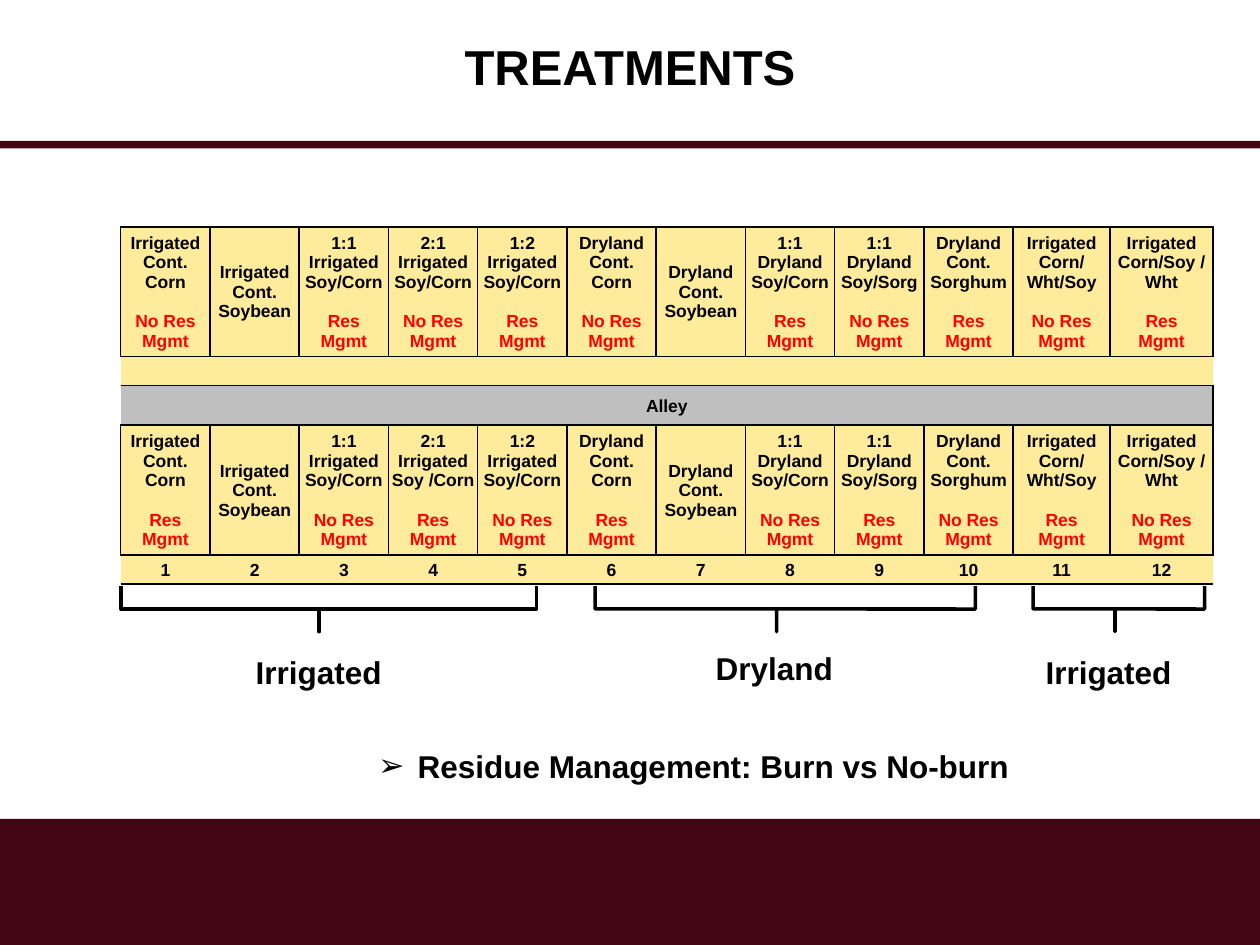
from lxml.etree import SubElement
from pptx import Presentation
from pptx.dml.color import RGBColor
from pptx.enum.shapes import MSO_SHAPE as SHAPE
from pptx.enum.text import MSO_ANCHOR as ANCHOR, MSO_AUTO_SIZE as AUTO, PP_ALIGN as ALIGN
from pptx.oxml.ns import qn
from pptx.util import Pt

BLACK = RGBColor(0x00, 0x00, 0x00)
RED = RGBColor(0xFF, 0x00, 0x00)
MAROON = RGBColor(0x41, 0x06, 0x11)
YELLOW = RGBColor(0xFF, 0xEB, 0x9C)
GREY = RGBColor(0xBF, 0xBF, 0xBF)
FONT = "Arial"

COL_WIDTHS = [51] * 10 + [55.4, 58.8]
ROW_HEIGHTS = [74.2, 16.6, 22.6, 74.2, 16.6]
CROPS = [
    "Irrigated Cont. Corn", "Irrigated Cont. Soybean",
    "1:1 Irrigated Soy/Corn", "2:1\nIrrigated Soy/Corn", "1:2 Irrigated Soy/Corn",
    "Dryland Cont. Corn", "Dryland Cont. Soybean",
    "1:1 Dryland Soy/Corn", "1:1\nDryland Soy/Sorg", "Dryland Cont. Sorghum",
    "Irrigated\nCorn/Wht/Soy", "Irrigated Corn/Soy /Wht",
]
MANAGED, UNMANAGED = "Res\nMgmt", "No Res Mgmt"
# Upper plots: True = residue managed, None = no residue treatment
UPPER = [False, None, True, False, True, False, None, True, False, True, False, True]
# Lower plots receive the opposite treatment
LOWER = [None if m is None else not m for m in UPPER]


def style(p, size, color=BLACK, align=None):
    p.alignment = align
    for r in p.runs:
        r.font.name, r.font.size, r.font.bold = FONT, Pt(size), True
        r.font.color.rgb = color


def add_bar(slide, top, height):
    sp = slide.shapes.add_shape(SHAPE.RECTANGLE, 0, Pt(top), Pt(720), Pt(height))
    sp.shadow.inherit = False
    sp.fill.solid()
    sp.fill.fore_color.rgb = MAROON
    sp.line.fill.background()


def add_text(slide, text, left, top, width, wrap=False, align=None):
    tf = slide.shapes.add_textbox(Pt(left), Pt(top), Pt(width), Pt(29)).text_frame
    tf.word_wrap = wrap
    tf.auto_size = AUTO.SHAPE_TO_FIT_TEXT
    tf.text = text
    style(tf.paragraphs[0], 18, align=align)
    return tf.paragraphs[0]


def add_bracket(slide, left, top, width, depth=26):
    """Square bracket below the plots: a right brace turned a quarter."""
    x, y = left + (width - depth) / 2, top - (width - depth) / 2
    sp = slide.shapes.add_shape(SHAPE.RIGHT_BRACE, Pt(x), Pt(y), Pt(depth), Pt(width))
    sp.rotation = 90
    sp.adjustments[0], sp.adjustments[1] = 0, 0.523
    sp.shadow.inherit = False
    sp.fill.background()
    sp.line.color.rgb = BLACK
    sp.line.width = Pt(2)


def set_borders(cell, sides):
    tcPr = cell._tc.get_or_add_tcPr()
    for side in "LRTB":
        ln = SubElement(tcPr, qn(f"a:ln{side}"), w=str(Pt(1)))
        if side in sides:
            fill = SubElement(ln, qn("a:solidFill"))
            SubElement(fill, qn("a:srgbClr"), val=str(BLACK))
        else:
            SubElement(ln, qn("a:noFill"))


def fill_cell(cell, text="", treatment="", fill=YELLOW, sides="TB"):
    set_borders(cell, sides)
    cell.fill.solid()
    cell.fill.fore_color.rgb = fill
    cell.vertical_anchor = ANCHOR.MIDDLE
    cell.margin_left = cell.margin_right = cell.margin_top = Pt(0.7)
    cell.margin_bottom = 0
    tf = cell.text_frame
    tf.text = f"{text}\n{treatment}" if treatment else text
    first_red = len(text.split("\n"))
    for i, p in enumerate(tf.paragraphs):
        style(p, 10, RED if i >= first_red else BLACK, ALIGN.CENTER)
        if i == first_red:
            p.space_before = Pt(11.5)
        if not p.runs:
            # Keeps an empty row at its low height
            SubElement(p._p, qn("a:endParaRPr"), sz="1000")


def add_plots(slide):
    n = len(CROPS)
    frame = slide.shapes.add_table(len(ROW_HEIGHTS), n, Pt(69), Pt(129.6),
                                   Pt(sum(COL_WIDTHS)), Pt(sum(ROW_HEIGHTS)))
    table = frame.table
    table.first_row = table.horz_banding = False
    for col, width in zip(table.columns, COL_WIDTHS):
        col.width = Pt(width)
    for row, height in zip(table.rows, ROW_HEIGHTS):
        row.height = Pt(height)

    lower_crops = CROPS.copy()
    lower_crops[3] = "2:1\nIrrigated Soy /Corn"
    for row, crops, plan in ((0, CROPS, UPPER), (3, lower_crops, LOWER)):
        for c, (crop, managed) in enumerate(zip(crops, plan)):
            treatment = {None: "", True: MANAGED, False: UNMANAGED}[managed]
            fill_cell(table.cell(row, c), crop, treatment, sides="LRTB")
    for c in range(n):
        fill_cell(table.cell(1, c))
        fill_cell(table.cell(4, c), str(c + 1))
    table.cell(2, 0).merge(table.cell(2, n - 1))
    fill_cell(table.cell(2, 0), "Alley", fill=GREY, sides="RTB")


def set_title(slide, text):
    title = slide.shapes.title
    title.left, title.top, title.width, title.height = 0, 0, Pt(720), Pt(80)
    tf = title.text_frame
    tf.text = text
    tf.vertical_anchor = ANCHOR.MIDDLE
    tf.paragraphs[0].line_spacing = 0.9
    style(tf.paragraphs[0], 28, align=ALIGN.CENTER)


def add_bullet(p, char, indent):
    pPr = p._p.get_or_add_pPr()
    pPr.set("marL", str(Pt(indent)))
    pPr.set("indent", str(-Pt(indent)))
    SubElement(pPr, qn("a:buFont"), typeface=FONT)
    SubElement(pPr, qn("a:buChar"), char=char)


def main():
    prs = Presentation()
    prs.slide_width, prs.slide_height = Pt(720), Pt(540)
    slide = prs.slides.add_slide(prs.slide_layouts[5])

    # Title and maroon bars
    set_title(slide, "TREATMENTS")
    add_bar(slide, 80.6, 4.3)
    add_bar(slide, 468, 72)

    # Plot layout
    add_plots(slide)

    # Water regime groups: bracket left and width, label left, top and width
    for text, left, width, x, y, w in (
        ("Irrigated", 69, 237.6, 139, 369.4, 92),
        ("Dryland", 340, 217.4, 401.8, 367.2, 82),
        ("Irrigated", 590.4, 98, 590.4, 369.4, 92),
    ):
        add_bracket(slide, left, 335, width)
        add_text(slide, text, x, y, w)

    # Residue note
    p = add_text(slide, "Residue Management: Burn vs No-burn", 196.6, 423.4, 399.6,
                 wrap=True, align=ALIGN.CENTER)
    add_bullet(p, "➢", 22.5)

    prs.save("out.pptx")


if __name__ == "__main__":
    main()
